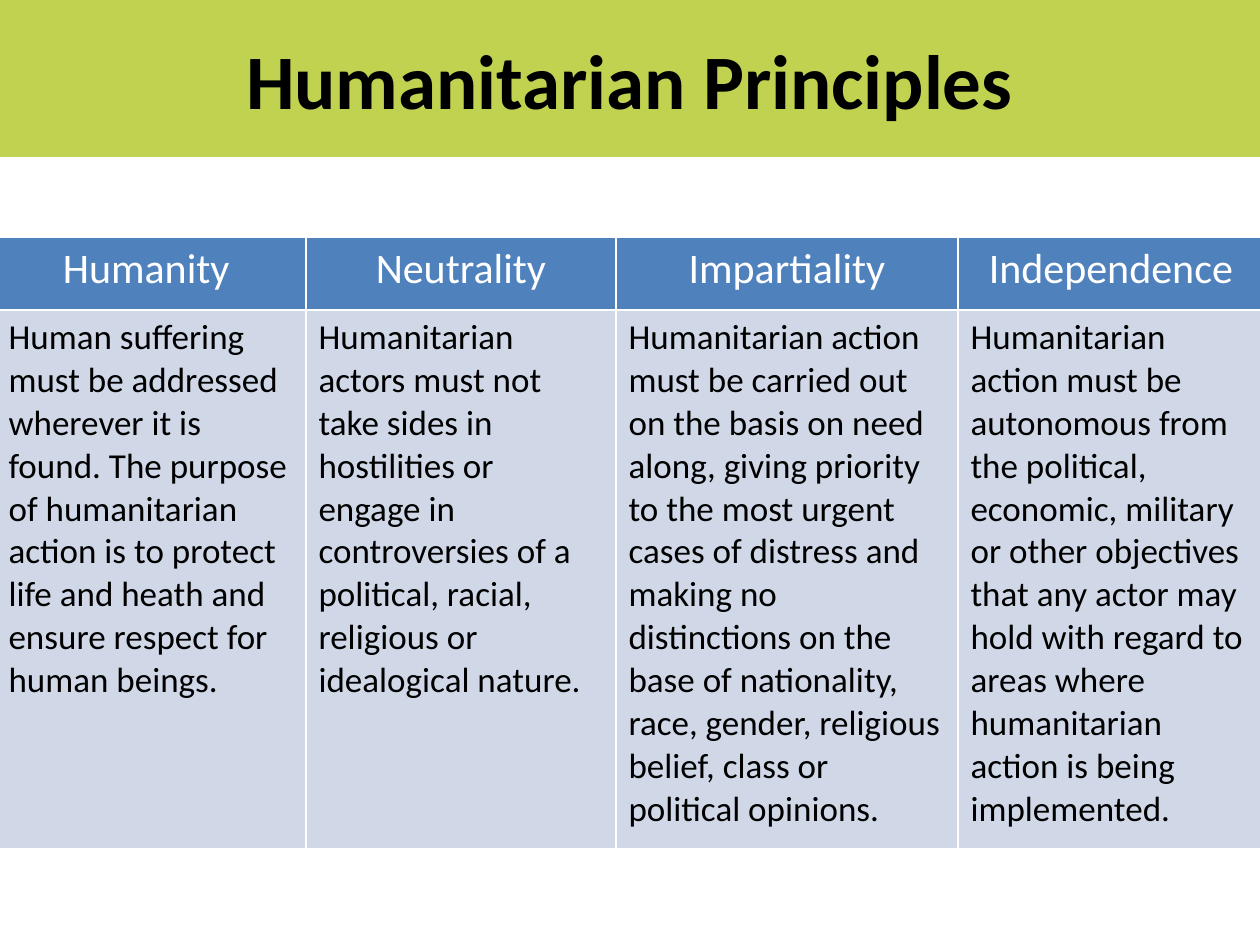
from pptx import Presentation
from pptx.dml.color import RGBColor
from pptx.enum.text import MSO_ANCHOR, PP_ALIGN
from pptx.util import Pt

PX = 914400 / 126  # EMU per pixel

LIME = RGBColor(0xC1, 0xD1, 0x50)
BLUE = RGBColor(0x4F, 0x81, 0xBD)
PALE_BLUE = RGBColor(0xD0, 0xD8, 0xE8)
WHITE = RGBColor(0xFF, 0xFF, 0xFF)
BLACK = RGBColor(0x00, 0x00, 0x00)

COLUMN_WIDTHS = [310, 310, 342, 306]
ROW_HEIGHTS = [73, 539]

PRINCIPLES = [
    ("Humanity\u00a0",
     "Human suffering must be addressed wherever it is found. The purpose of "
     "humanitarian action is to protect life and heath and ensure respect for "
     "human beings."),
    ("Neutrality",
     "Humanitarian actors must not take sides in hostilities or engage in "
     "controversies of a political, racial, religious or idealogical nature."),
    ("Impartiality",
     "Humanitarian action must be carried out on the basis on need along, giving "
     "priority to the most urgent cases of distress and making no distinctions on "
     "the base of nationality, race, gender, religious belief, class or political "
     "opinions."),
    ("Independence",
     "Humanitarian action must be autonomous from the political, economic, military "
     "or other objectives that any actor may hold with regard to areas where "
     "humanitarian action is being implemented."),
]


def px(length):
    return round(length * PX)


def format_text(paragraph, size, color, bold, alignment):
    paragraph.alignment = alignment
    for run in paragraph.runs:
        run.font.name = "Calibri"
        run.font.size = Pt(size)
        run.font.bold = bold
        run.font.color.rgb = color


presentation = Presentation()
presentation.slide_width = px(1260)
presentation.slide_height = px(945)
slide = presentation.slides.add_slide(presentation.slide_layouts[5])

# Title band
title = slide.shapes.title
title.left, title.top, title.width, title.height = 0, 0, px(1260), px(157)
title.fill.solid()
title.fill.fore_color.rgb = LIME
title.text_frame.text = "Humanitarian Principles"
title.text_frame.vertical_anchor = MSO_ANCHOR.MIDDLE
format_text(title.text_frame.paragraphs[0], 44, BLACK, True, PP_ALIGN.CENTER)

# Table of principles; its default style draws the white borders
table = slide.shapes.add_table(
    len(ROW_HEIGHTS), len(PRINCIPLES), px(-4), px(237),
    px(sum(COLUMN_WIDTHS)), px(sum(ROW_HEIGHTS))).table
for column, width in zip(table.columns, COLUMN_WIDTHS):
    column.width = px(width)
for row, height in zip(table.rows, ROW_HEIGHTS):
    row.height = px(height)

# Heading and description styles: fill, size, colour, alignment
row_styles = [(BLUE, 24, WHITE, PP_ALIGN.CENTER),
              (PALE_BLUE, 20, BLACK, PP_ALIGN.LEFT)]
for column_index, principle in enumerate(PRINCIPLES):
    for row_index, (fill, size, color, alignment) in enumerate(row_styles):
        cell = table.cell(row_index, column_index)
        cell.fill.solid()
        cell.fill.fore_color.rgb = fill
        cell.text_frame.text = principle[row_index]
        format_text(cell.text_frame.paragraphs[0], size, color, False, alignment)

presentation.save("out.pptx")
